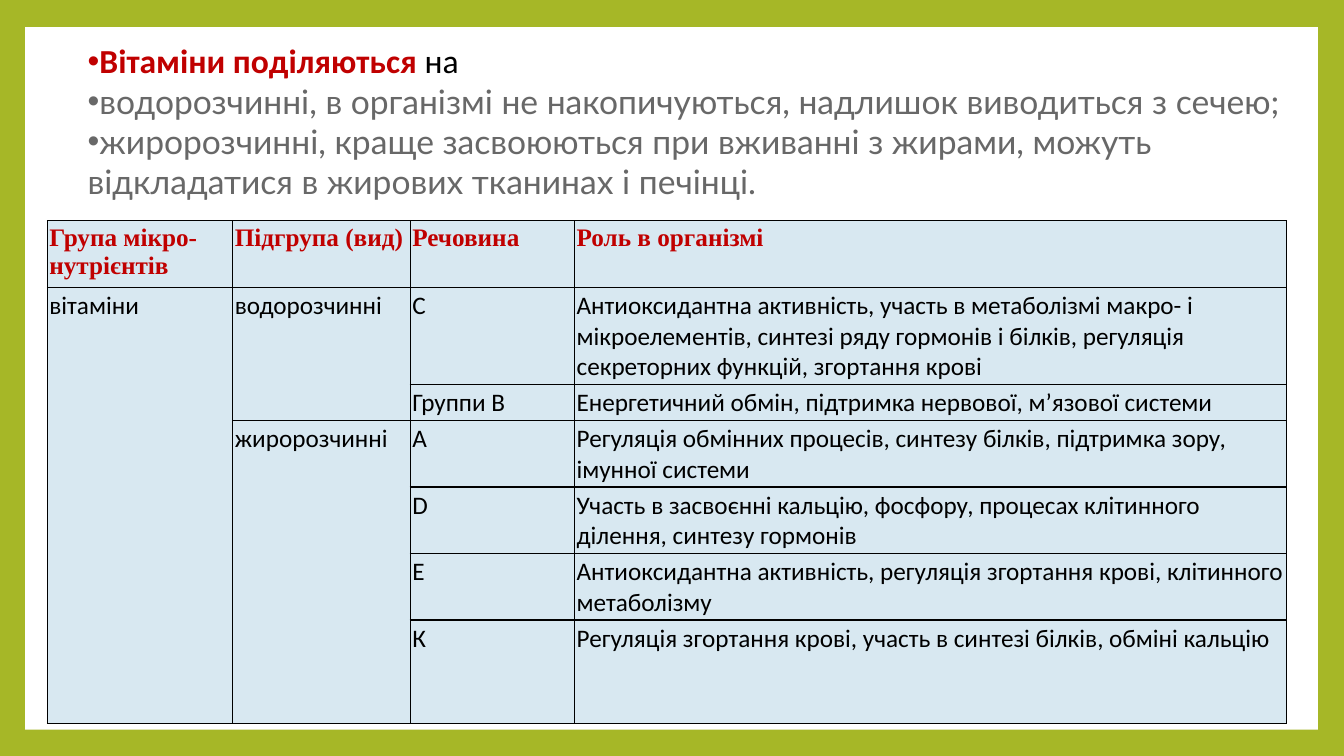
from lxml.etree import SubElement
from pptx import Presentation
from pptx.dml.color import RGBColor
from pptx.enum.shapes import MSO_SHAPE
from pptx.enum.text import MSO_ANCHOR, MSO_AUTO_SIZE, PP_ALIGN
from pptx.oxml.ns import qn
from pptx.util import Inches, Pt

COLORS = {"frame": "A6B727", "paper": "FFFFFF", "accent": "C00000",
          "text": "000000", "muted": "686868", "cell": "D8E8F1"}

INTRO = [
    [("Вітаміни поділяються ", "Calibri", "accent", True),
     ("на", "Calibri", "text", False)],
    [("водорозчинні, в організмі не накопичуються, надлишок виводиться з сечею;",
      "Lato", "muted", False)],
    [("жиророзчинні, краще засвоюються при вживанні з жирами, можуть "
      "відкладатися в жирових тканинах і печінці.", "Lato", "muted", False)],
]

VITAMINS = [
    ("Група мікро-нутрієнтів", "Підгрупа (вид)", "Речовина", "Роль в організмі"),
    ("вітаміни", "водорозчинні", "С",
     "Антиоксидантна активність, участь в метаболізмі макро- і мікроелементів, "
     "синтезі ряду гормонів і білків, регуляція секреторних функцій, згортання крові"),
    ("", "", "Группи В", "Енергетичний обмін, підтримка нервової, м’язової системи"),
    ("", "жиророзчинні", "А",
     "Регуляція обмінних процесів, синтезу білків, підтримка зору, імунної системи"),
    ("", "", "D",
     "Участь в засвоєнні кальцію, фосфору, процесах клітинного ділення, синтезу гормонів"),
    ("", "", "Е",
     "Антиоксидантна активність, регуляція згортання крові, клітинного метаболізму"),
    ("", "", "К", "Регуляція згортання крові, участь в синтезі білків, обміні кальцію"),
]
COL_WIDTHS = [1.84, 1.76, 1.63, 7.06]
ROW_HEIGHTS = [0.54, 0.83, 0.29, 0.55, 0.54, 0.54, 1.03]
MERGES = [((1, 0), (6, 0)), ((1, 1), (2, 1)), ((3, 1), (6, 1))]


class SlideBuilder:
    def __init__(self, prs):
        self.slide = prs.slides.add_slide(prs.slide_layouts[1])
        title = self.slide.shapes.title.element
        title.getparent().remove(title)

    def color(self, name):
        return RGBColor.from_string(COLORS[name])

    def fill(self, target, name):
        target.fill.solid()
        target.fill.fore_color.rgb = self.color(name)

    def format_run(self, r, size, font, color, bold):
        r.font.size, r.font.name, r.font.bold = Pt(size), font, bold
        r.font.color.rgb = self.color(color)

    def panel(self, box):
        sp = self.slide.shapes.add_shape(MSO_SHAPE.RECTANGLE, *map(Inches, box))
        sp.shadow.inherit = False
        self.fill(sp, "paper")
        sp.line.fill.background()
        tree = self.slide.shapes.element
        tree.remove(sp.element)
        tree.insert(2, sp.element)  # behind the placeholder

    def bullets(self, box, paragraphs):
        sp = self.slide.placeholders[1]
        sp.left, sp.top, sp.width, sp.height = map(Inches, box)
        tf = sp.text_frame
        tf.word_wrap = True
        tf.auto_size = MSO_AUTO_SIZE.SHAPE_TO_FIT_TEXT
        tf.vertical_anchor = MSO_ANCHOR.TOP
        for i, runs in enumerate(paragraphs):
            p = tf.add_paragraph() if i else tf.paragraphs[0]
            p.alignment = PP_ALIGN.LEFT
            p.space_before = p.space_after = Pt(0)
            pPr = p._p.get_or_add_pPr()
            pPr.set("marL", "0")
            pPr.set("indent", "0")
            SubElement(pPr, qn("a:buFont"), typeface="Arial")
            SubElement(pPr, qn("a:buChar"), char="•")
            for text, *style in runs:
                r = p.add_run()
                r.text = text
                self.format_run(r, 24, *style)

    def border(self, cell):
        tcPr = cell._tc.get_or_add_tcPr()
        for side in ("lnL", "lnR", "lnT", "lnB"):
            ln = SubElement(tcPr, qn(f"a:{side}"), w=str(Pt(1)))
            line_fill = SubElement(ln, qn("a:solidFill"))
            SubElement(line_fill, qn("a:srgbClr"), val=COLORS["text"])

    def table(self, left, top, rows, widths, heights, merges):
        frame = self.slide.shapes.add_table(
            len(rows), len(widths), Inches(left), Inches(top),
            Inches(sum(widths)), Inches(sum(heights)))
        table = frame.table
        for column, width in zip(table.columns, widths):
            column.width = Inches(width)
        for row, height in zip(table.rows, heights):
            row.height = Inches(height)
        for i, texts in enumerate(rows):
            style = (("Times New Roman", "accent", True) if i == 0
                     else ("Calibri", "text", False))
            for j, text in enumerate(texts):
                cell = table.cell(i, j)
                cell.margin_left = cell.margin_right = Inches(0.02)
                cell.margin_top = cell.margin_bottom = Inches(0.03)
                self.border(cell)
                self.fill(cell, "cell")
                if text:
                    cell.text_frame.text = text
                    self.format_run(cell.text_frame.paragraphs[0].runs[0], 18, *style)
        for first, last in merges:
            table.cell(*first).merge(table.cell(*last))


def main():
    prs = Presentation()
    prs.slide_width, prs.slide_height = Inches(13.33), Inches(7.5)
    s = SlideBuilder(prs)
    s.fill(s.slide.background, "frame")
    s.panel((0.25, 0.27, 12.82, 6.97))
    s.bullets((0.77, 0.35, 12.57, 1.72), INTRO)
    s.table(0.47, 2.19, VITAMINS, COL_WIDTHS, ROW_HEIGHTS, MERGES)
    prs.save("out.pptx")


if __name__ == "__main__":
    main()
